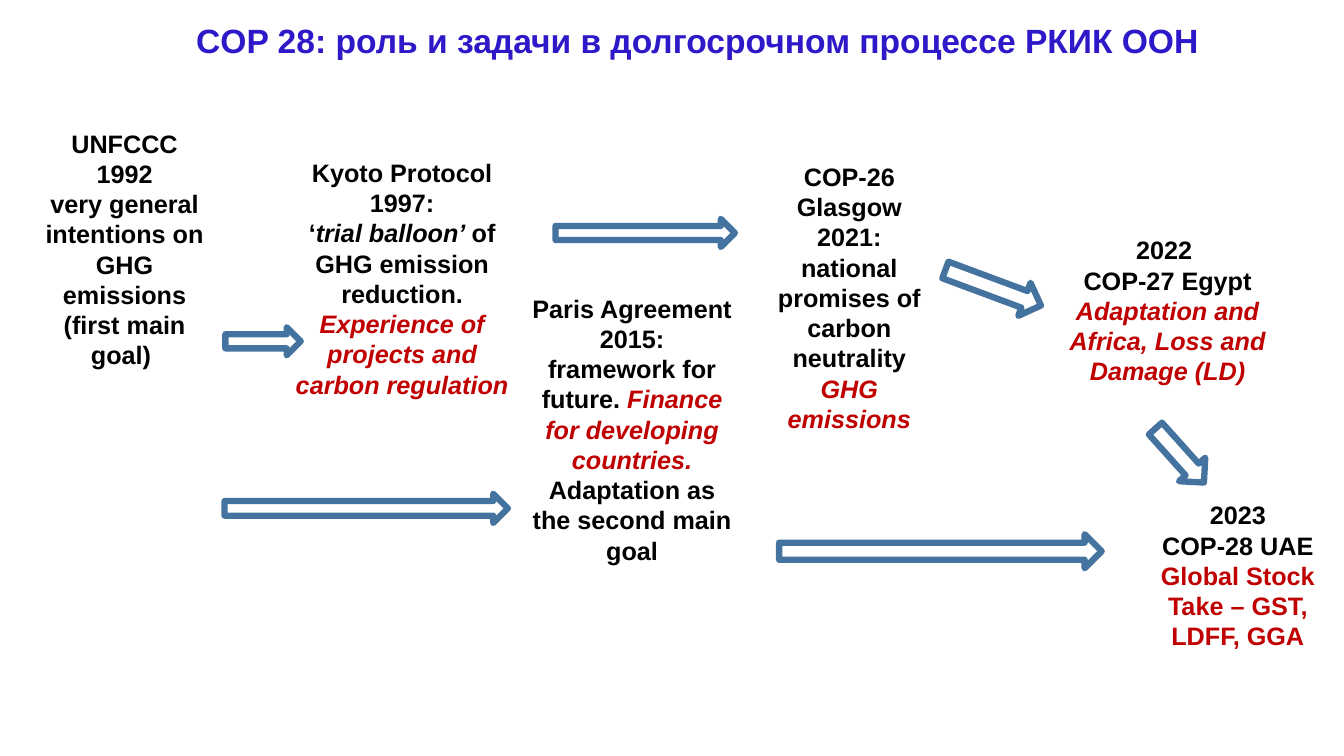
from dataclasses import dataclass

from pptx import Presentation
from pptx.dml.color import RGBColor
from pptx.enum import shapes, text
from pptx.util import Cm, Pt


@dataclass(frozen=True)
class Theme:
    font: str = "Arial"
    title_size: float = 24
    body_size: float = 18
    arrow_width: float = 4.5
    title: str = "2E19C9"
    ink: str = "000000"
    accent: str = "C00000"
    arrow: str = "43739E"
    paper: str = "FFFFFF"


THEME = Theme()
RED = {"color": THEME.accent}
RED_ITALIC = {"color": THEME.accent, "italic": True}

# Each milestone: box (left, top, width, height) in cm, then paragraphs of (words, format).
MILESTONES = [
    ((18.8, 3.94, 5.21, 7.19), [
        [("COP-26 Glasgow", {})],
        [("2021:\nnational promises of carbon neutrality", {})],
        [("GHG emissions", RED_ITALIC)]]),
    ((7.01, 3.84, 6.25, 6.4), [
        [("Kyoto Protocol\n1997:\n‘", {}), ("trial balloon’ ", {"italic": True}),
         ("of GHG emission reduction.", {})],
        [("Experience of projects and carbon regulation", RED_ITALIC)]]),
    ((13.06, 7.26, 5.74, 7.19), [
        [("Paris Agreement", {})],
        [("2015:\nframework for future. ", {}),
         ("Finance for developing countries.", RED_ITALIC)],
        [("Adaptation as the second main goal", {})]]),
    ((28.63, 12.47, 5.13, 4.11), [
        [("2023", {})],
        [("COP-28 UAE ", {}), ("Global Stock Take – GST,", RED)],
        [("LDFF, GGA", RED)]]),
    ((0.84, 3.1, 4.6, 7.95), [
        [("UNFCCC\n1992\nvery general intentions on GHG emissions (first main goal) ", {})]]),
    ((26.39, 5.79, 6.07, 4.11), [
        [("2022 \nCOP-27 Egypt ", {}),
         ("Adaptation and Africa, Loss and Damage (LD)", RED_ITALIC)]]),
]

# Each arrow: centre x, centre y, length, thickness in cm, then rotation from pointing down.
ARROWS = [
    (6.63, 8.6, 1.9, 0.71, 270),
    (23.7, 13.89, 8.13, 0.86, 270),
    (25.03, 7.25, 2.57, 0.89, 290.4),
    (9.23, 12.81, 7.14, 0.74, 270),
    (16.26, 5.87, 4.52, 0.71, 270),
    (29.73, 11.48, 1.83, 0.89, 318.1),
]


def add_text(p, words, size=THEME.body_size, color=THEME.ink, bold=True, italic=False):
    """Append formatted words to a paragraph, turning newlines into line breaks."""
    for i, line in enumerate(words.split("\n")):
        if i:
            p.add_line_break()
        r = p.add_run()
        r.text = line
        r.font.name = THEME.font
        r.font.size = Pt(size)
        r.font.color.rgb = RGBColor.from_string(color)
        r.font.bold = bold
        r.font.italic = italic


def add_title(s, box, words):
    sp = s.shapes.title
    sp.left, sp.top, sp.width, sp.height = map(Cm, box)
    tf = sp.text_frame
    tf.word_wrap = True
    tf.auto_size = text.MSO_AUTO_SIZE.NONE
    tf.vertical_anchor = text.MSO_ANCHOR.TOP
    p = tf.paragraphs[0]
    p.alignment = text.PP_ALIGN.CENTER
    p.line_spacing = 0.9
    add_text(p, words, size=THEME.title_size, color=THEME.title)


def add_milestone(s, box, paragraphs):
    sp = s.shapes.add_shape(shapes.MSO_SHAPE.RECTANGLE, *map(Cm, box))
    sp.shadow.inherit = False
    sp.fill.solid()
    sp.fill.fore_color.rgb = RGBColor.from_string(THEME.paper)
    sp.line.fill.background()
    tf = sp.text_frame
    tf.word_wrap = True
    tf.auto_size = text.MSO_AUTO_SIZE.SHAPE_TO_FIT_TEXT
    tf.vertical_anchor = text.MSO_ANCHOR.TOP
    for i, pieces in enumerate(paragraphs):
        p = tf.add_paragraph() if i else tf.paragraphs[0]
        p.alignment = text.PP_ALIGN.CENTER
        for words, style in pieces:
            add_text(p, words, **style)


def add_arrow(s, x, y, length, thickness, rotation):
    """Place an outlined block arrow around its centre."""
    sp = s.shapes.add_shape(
        shapes.MSO_SHAPE.DOWN_ARROW, Cm(x - thickness / 2), Cm(y - length / 2),
        Cm(thickness), Cm(length))
    sp.rotation = rotation
    sp.shadow.inherit = False
    sp.fill.background()
    sp.line.color.rgb = RGBColor.from_string(THEME.arrow)
    sp.line.width = Pt(THEME.arrow_width)


def main():
    prs = Presentation()
    prs.slide_width, prs.slide_height = Cm(33.87), Cm(19.05)
    s = prs.slides.add_slide(prs.slide_layouts.get_by_name("Title Only"))
    add_title(s, (4.22, 0.48, 26.95, 1.37),
              "COP 28: роль и задачи в долгосрочном процессе РКИК ООН ")
    for box, paragraphs in MILESTONES:
        add_milestone(s, box, paragraphs)
    for arrow in ARROWS:
        add_arrow(s, *arrow)
    prs.save("out.pptx")


if __name__ == "__main__":
    main()
